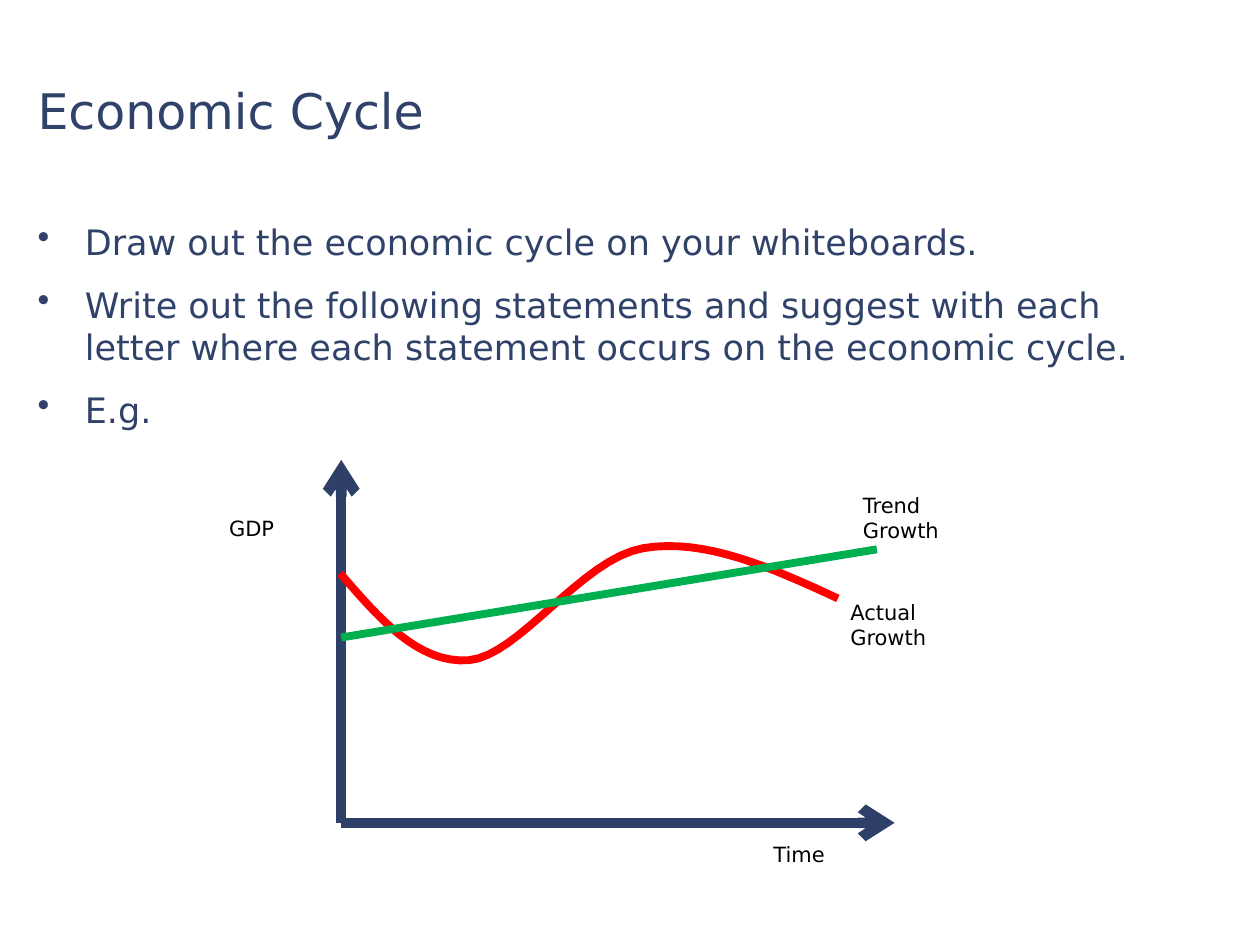
from dataclasses import dataclass

from lxml.etree import SubElement
from pptx import Presentation
from pptx.dml.color import RGBColor as Color
from pptx.enum.shapes import MSO_CONNECTOR as Connector
from pptx.enum.text import MSO_ANCHOR as Anchor
from pptx.oxml.ns import qn
from pptx.util import Pt


@dataclass(frozen=True)
class Theme:
    """Colours, font and type sizes of the slide."""
    font: str = "DejaVu Sans"
    heading: str = "304269"
    label: str = "000000"
    axis: str = "2E4068"
    actual: str = "FF0000"
    trend: str = "00B050"
    title_size: float = 28
    body_size: float = 20
    label_size: float = 12
    axis_width: float = 6
    curve_width: float = 4.5


THEME = Theme()
BULLETS = (
    "Draw out the economic cycle on your whiteboards.",
    "Write out the following statements and suggest with each letter "
    "where each statement occurs on the economic cycle.",
    "E.g.",
)
LABELS = (
    ("Actual Growth", 478.8, 339.1, 87.8, 36.4),
    ("Trend Growth", 486, 277.9, 87.8, 36.4),
    ("GDP", 123.8, 290.9, 65.5, 21.8),
    ("Time", 434.9, 477.4, 51.1, 21.8),
)
ORIGIN_X, ORIGIN_Y = 195, 470.2
CYCLE_START = (194.4, 327.6)
CYCLE_CURVES = (
    ((216.7, 353.5), (239, 379.4), (267.8, 377.3)),
    ((296.6, 375.1), (332.6, 319), (367.9, 313.2)),
    ((403.2, 307.4), (441.4, 324.7), (478.8, 342)),
)


def add_text(page, lines, left, top, width, height, size, color):
    """Add a wrapping text box with one paragraph per line."""
    box = page.shapes.add_textbox(Pt(left), Pt(top), Pt(width), Pt(height))
    frame = box.text_frame
    frame.word_wrap = True
    frame.text = "\n".join(lines)
    for para in frame.paragraphs:
        para.font.name = THEME.font
        para.font.size = Pt(size)
        para.font.color.rgb = Color.from_string(color)
    return frame


def add_bullets(page, lines, left, top, width, height):
    """Add a bulleted list with hanging indents."""
    frame = add_text(page, lines, left, top, width, height,
                     THEME.body_size, THEME.heading)
    for index, para in enumerate(frame.paragraphs):
        properties = para._p.get_or_add_pPr()
        properties.set("marL", str(Pt(27)))
        properties.set("indent", str(Pt(-27)))
        para.space_before = Pt(6 if index else 0)
        para.space_after = Pt(6)
        bullet = properties.makeelement(qn("a:buChar"), {"char": "•"})
        properties.insert_element_before(
            bullet, "a:tabLst", "a:defRPr", "a:extLst")


def style_line(line, color, width):
    """Set the colour and width of a line."""
    line.color.rgb = Color.from_string(color)
    line.width = Pt(width)


def add_line(page, start, end, color, width, arrow=False):
    """Add a straight line, with an arrowhead at its end if asked."""
    line = page.shapes.add_connector(
        Connector.STRAIGHT, *(Pt(value) for value in start + end))
    style_line(line.line, color, width)
    if arrow:
        SubElement(line.line._get_or_add_ln(), qn("a:tailEnd"), type="arrow")
    SubElement(line._element.spPr, qn("a:effectLst"))


def curve_points(start, curves, steps=16):
    """Return points along a chain of cubic Bézier curves."""
    points = []
    for first, second, end in curves:
        for step in range(1, steps + 1):
            t = step / steps
            u = 1 - t
            weights = (u ** 3, 3 * u * u * t, 3 * u * t * t, t ** 3)
            points.append(tuple(
                Pt(sum(w * value for w, value in zip(weights, values)))
                for values in zip(start, first, second, end)))
        start = end
    return points


def add_curve(page, start, curves, color, width):
    """Add an open smooth curve."""
    builder = page.shapes.build_freeform(*(Pt(value) for value in start))
    builder.add_line_segments(curve_points(start, curves), close=False)
    curve = builder.convert_to_shape()
    curve.shadow.inherit = False
    curve.fill.background()
    style_line(curve.line, color, width)


def main():
    """Build and save the slide."""
    deck = Presentation()
    deck.slide_width, deck.slide_height = Pt(720), Pt(540)
    page = deck.slides.add_slide(deck.slide_layouts[6])
    title = add_text(page, ["Economic Cycle"], 14.4, 18, 669.6, 90,
                     THEME.title_size, THEME.heading)
    title.vertical_anchor = Anchor.MIDDLE
    add_bullets(page, BULLETS, 14.4, 122.4, 669.6, 385.2)
    for end in ((ORIGIN_X, 262.8), (511.2, ORIGIN_Y)):
        add_line(page, (ORIGIN_X, ORIGIN_Y), end,
                 THEME.axis, THEME.axis_width, arrow=True)
    add_curve(page, CYCLE_START, CYCLE_CURVES,
              THEME.actual, THEME.curve_width)
    add_line(page, (ORIGIN_X, 364.3), (501.1, 313.9),
             THEME.trend, THEME.curve_width)
    for text, *place in LABELS:
        add_text(page, [text], *place, THEME.label_size, THEME.label)
    deck.save("out.pptx")


if __name__ == "__main__":
    main()
